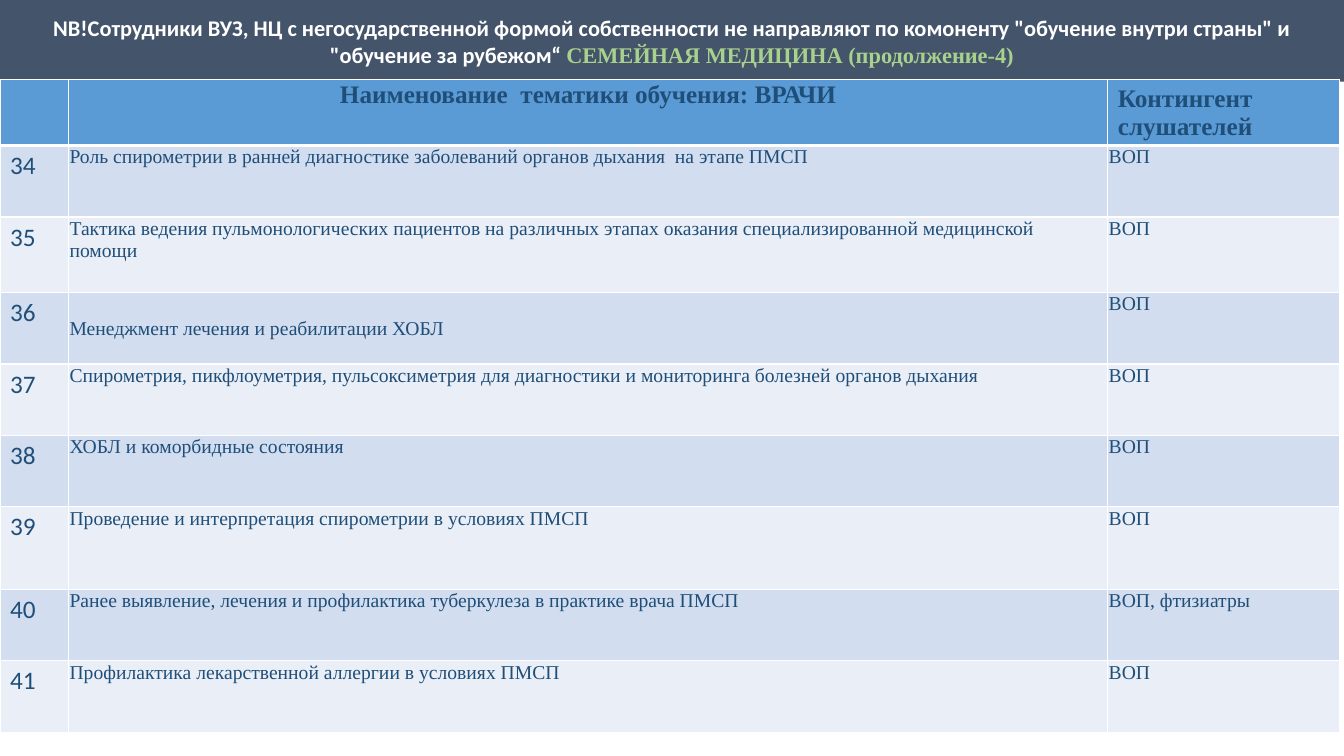
"""Builds a slide listing family medicine training topics for doctors."""
from lxml import etree
from pptx import Presentation
from pptx.dml.color import RGBColor
from pptx.enum.shapes import MSO_SHAPE
from pptx.enum.text import MSO_ANCHOR, PP_ALIGN
from pptx.oxml.ns import qn
from pptx.util import Pt

NOTE = 'NB!Сотрудники ВУЗ, НЦ с негосударственной формой собственности не направляют по комоненту "обучение внутри страны" и "обучение за рубежом“ '
FIELD = "СЕМЕЙНАЯ МЕДИЦИНА (продолжение-4)"
HEADS = ["", "Наименование  тематики обучения: ВРАЧИ", "Контингент слушателей"]
FIRST = 34
TOPICS = [
    ("Роль спирометрии в ранней диагностике заболеваний органов дыхания  на этапе ПМСП", "ВОП"),
    ("Тактика ведения пульмонологических пациентов на различных этапах оказания специализированной медицинской помощи", "ВОП"),
    ("Менеджмент лечения и реабилитации ХОБЛ", "ВОП"),
    ("Спирометрия, пикфлоуметрия, пульсоксиметрия для диагностики и мониторинга болезней органов дыхания", "ВОП"),
    ("ХОБЛ и коморбидные состояния", "ВОП"),
    ("Проведение и интерпретация спирометрии в условиях ПМСП", "ВОП"),
    ("Ранее выявление, лечения и профилактика туберкулеза в практике врача ПМСП", "ВОП, фтизиатры"),
    ("Профилактика лекарственной аллергии в условиях ПМСП", "ВОП"),
]
MIDDLE_ROW = 3

WIDE, HIGH = 960, 540
BANNER_H = 58.3
TABLE_TOP = 56.9
COLS = [49, 742.3, 165.6]
HEAD_H, ROW_H = 35.3, 51
TALL = {2: 54, 6: 59}
TIGHT = 0.7

SANS, SERIF = "Calibri", "Times New Roman"
WHITE = RGBColor(0xFF, 0xFF, 0xFF)
SLATE = RGBColor(0x44, 0x54, 0x6A)
GREEN = RGBColor(0xA9, 0xD1, 0x8E)
NAVY = RGBColor(0x1F, 0x4E, 0x79)
BLUE = RGBColor(0x5B, 0x9B, 0xD5)
BANDS = [RGBColor(0xEA, 0xEF, 0xF7), RGBColor(0xD2, 0xDE, 0xEF)]
CENTER, LEFT = PP_ALIGN.CENTER, PP_ALIGN.LEFT
TOP, MIDDLE = MSO_ANCHOR.TOP, MSO_ANCHOR.MIDDLE
RECT = MSO_SHAPE.RECTANGLE


def add_run(para, text, size, font, color, bold):
    run = para.add_run()
    run.text = text
    run.font.size = Pt(size)
    run.font.name = font
    run.font.color.rgb = color
    run.font.bold = bold


def add_edges(cell, widths):
    props = cell._tc.get_or_add_tcPr()
    for side, width in zip("LRTB", widths):
        line = etree.SubElement(props, qn(f"a:ln{side}"), w=str(int(Pt(width))))
        fill = etree.SubElement(line, qn("a:solidFill"))
        etree.SubElement(fill, qn("a:srgbClr"), val=str(WHITE))


def add_banner(slide):
    box = slide.shapes.add_shape(RECT, 0, 0, Pt(WIDE), Pt(BANNER_H))
    box.shadow.inherit = False
    box.fill.solid()
    box.fill.fore_color.rgb = SLATE
    box.line.fill.background()
    frame = box.text_frame
    frame.word_wrap = True
    frame.vertical_anchor = MIDDLE
    para = frame.paragraphs[0]
    para.alignment = CENTER
    add_run(para, NOTE, 16, SANS, WHITE, True)
    add_run(para, FIELD, 16, SERIF, GREEN, True)


def fill_cell(cell, text, row, col):
    head = row == 0
    add_edges(cell, (1, 1, 3 if row == 1 else 1, 3 if head else 1))
    cell.fill.solid()
    cell.fill.fore_color.rgb = BLUE if head else BANDS[row % 2]
    if col == 1 or (col == 2 and not head):
        cell.margin_left = cell.margin_right = cell.margin_top = Pt(TIGHT)
        cell.margin_bottom = 0
    cell.vertical_anchor = MIDDLE if (row, col) == (MIDDLE_ROW, 1) else TOP
    para = cell.text_frame.paragraphs[0]
    para.alignment = CENTER if head and col == 1 else LEFT
    if text:
        size = 18 if head or col == 0 else 14
        font = SANS if col == 0 else SERIF
        add_run(para, text, size, font, NAVY, head)


def add_topics(slide):
    rows = [HEADS] + [(str(num), *topic) for num, topic in enumerate(TOPICS, FIRST)]
    highs = [HEAD_H] + [TALL.get(row, ROW_H) for row in range(1, len(rows))]
    table = slide.shapes.add_table(
        len(rows), len(COLS), 0, Pt(TABLE_TOP), Pt(sum(COLS)), Pt(sum(highs))
    ).table
    for col, width in enumerate(COLS):
        table.columns[col].width = Pt(width)
    for row, texts in enumerate(rows):
        table.rows[row].height = Pt(highs[row])
        for col, text in enumerate(texts):
            fill_cell(table.cell(row, col), text, row, col)


def main():
    deck = Presentation()
    deck.slide_width, deck.slide_height = Pt(WIDE), Pt(HIGH)
    slide = deck.slides.add_slide(deck.slide_layouts[6])
    add_banner(slide)
    add_topics(slide)
    deck.save("out.pptx")


if __name__ == "__main__":
    main()
